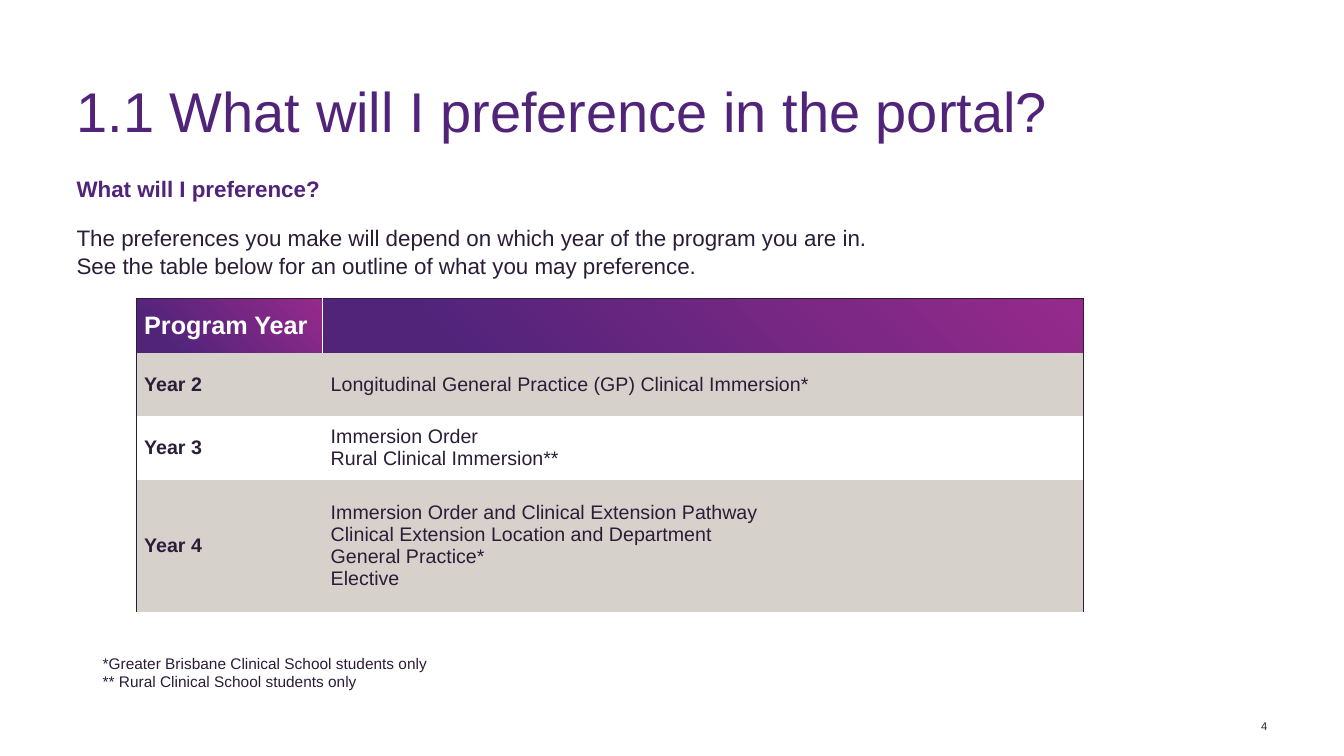
from lxml import etree
from pptx import Presentation
from pptx.dml.color import RGBColor
from pptx.enum.text import MSO_ANCHOR, PP_ALIGN
from pptx.oxml.ns import qn
from pptx.util import Inches, Pt

MIDDLE, TOP, RIGHT = MSO_ANCHOR.MIDDLE, MSO_ANCHOR.TOP, PP_ALIGN.RIGHT
PURPLE, PINK, INK, WHITE, STONE = "51247A", "962A8B", "2B1D37", "FFFFFF", "D7D1CC"
PLAIN_STYLE = "{2D5ABB26-0587-4C30-8999-92F81FD0307C}"

TITLE = "1.1 What will I preference in the portal?"
LEAD = "What will I preference?"
BODY = ["The preferences you make will depend on which year of the program you are in. ",
        "See the table below for an outline of what you may preference."]
ROWS = [
    ("Program Year", []),
    ("Year 2", ["Longitudinal General Practice (GP) Clinical Immersion*"]),
    ("Year 3", ["Immersion Order", "Rural Clinical Immersion**"]),
    ("Year 4", ["Immersion Order and Clinical Extension Pathway",
                "Clinical Extension Location and Department",
                "General Practice*", "Elective"]),
]
NOTES = ["*Greater Brisbane Clinical School students only",
         "** Rural Clinical School students only"]
PAGE = "4"
COLS = [1.85, 7.55]
HEIGHTS = [0.54, 0.63, 0.63, 1.31]


def rgb(code):
    return RGBColor.from_string(code)


def add_run(para, text, size, color=INK, bold=False):
    run = para.add_run()
    run.text = text
    font = run.font
    font.name, font.size, font.bold = "Arial", Pt(size), bold
    font.color.rgb = rgb(color)


def fill_lines(frame, lines, size, color=INK, bold=False):
    """Write each line as its own paragraph."""
    for i, line in enumerate(lines):
        para = frame.add_paragraph() if i else frame.paragraphs[0]
        add_run(para, line, size, color, bold)


def add_box(slide, left, top, width, height, inset=0, anchor=TOP):
    box = slide.shapes.add_textbox(*map(Inches, (left, top, width, height)))
    frame = box.text_frame
    frame.word_wrap = True
    frame.vertical_anchor = anchor
    frame.margin_left = frame.margin_right = Inches(inset)
    frame.margin_top = frame.margin_bottom = Inches(inset / 2)
    return frame


def add_edges(cell, edges):
    """Draw cell borders; edges come in the order left, right, top."""
    props = cell._tc.get_or_add_tcPr()
    for side, color, width in edges:
        line = etree.SubElement(props, qn("a:ln" + side), w=str(Pt(width)))
        solid = etree.SubElement(line, qn("a:solidFill"))
        etree.SubElement(solid, qn("a:srgbClr"), val=color)


def paint(cell, row):
    fill = cell.fill
    if row == 0:
        fill.gradient()
        fill.gradient_angle = 45
        for stop, place, color in zip(fill.gradient_stops, (0.16, 1), (PURPLE, PINK)):
            stop.position = place
            stop.color.rgb = rgb(color)
    elif row % 2:
        fill.solid()
        fill.fore_color.rgb = rgb(STONE)
    else:
        fill.background()


def add_grid(slide, left, top):
    frame = slide.shapes.add_table(len(ROWS), len(COLS), Inches(left), Inches(top),
                                   Inches(sum(COLS)), Inches(sum(HEIGHTS)))
    table = frame.table
    table.horz_banding = False
    table._tbl.tblPr.find(qn("a:tableStyleId")).text = PLAIN_STYLE
    for col, width in zip(table.columns, COLS):
        col.width = Inches(width)
    for r, (year, items) in enumerate(ROWS):
        table.rows[r].height = Inches(HEIGHTS[r])
        head = r == 0
        for c, lines in enumerate(([year], items)):
            cell = table.cell(r, c)
            cell.vertical_anchor = MIDDLE
            cell.margin_left, cell.margin_right = Inches(0.08), 0
            cell.margin_top = cell.margin_bottom = Inches(0.02)
            fill_lines(cell.text_frame, lines, 18 if head else 14,
                       WHITE if head else INK, c == 0)
            outer = ("R" if c else "L", INK, 1)
            inner = ("L" if c else "R", WHITE, 0.75)
            edges = sorted([outer, inner]) + [("T", INK, 1)] if head else [outer]
            add_edges(cell, edges)
            paint(cell, r)


def main():
    deck = Presentation()
    deck.slide_width, deck.slide_height = Inches(13.33), Inches(7.5)
    slide = deck.slides.add_slide(deck.slide_layouts[6])

    title = add_box(slide, 0.76, 0.83, 11.84, 0.51)
    fill_lines(title, [TITLE], 40, PURPLE)
    title.paragraphs[0].line_spacing = 0.9

    body = add_box(slide, 0.76, 1.72, 10.58, 1.1)
    lead, text = body.paragraphs[0], body.add_paragraph()
    add_run(lead, LEAD, 16, PURPLE, True)
    add_run(text, BODY[0], 16)
    text.add_line_break()
    add_run(text, BODY[1], 16)
    text.space_before = Pt(3)
    for para in (lead, text):
        para.space_after = Pt(12)
        para.line_spacing = 1.05

    add_grid(slide, 1.35, 2.96)
    fill_lines(add_box(slide, 0.92, 6.44, 6.06, 0.47, 0.1), NOTES, 11)

    page = add_box(slide, 12.26, 7.14, 0.31, 0.12, anchor=MIDDLE)
    fill_lines(page, [PAGE], 8)
    page.paragraphs[0].alignment = RIGHT
    deck.save("out.pptx")


if __name__ == "__main__":
    main()
